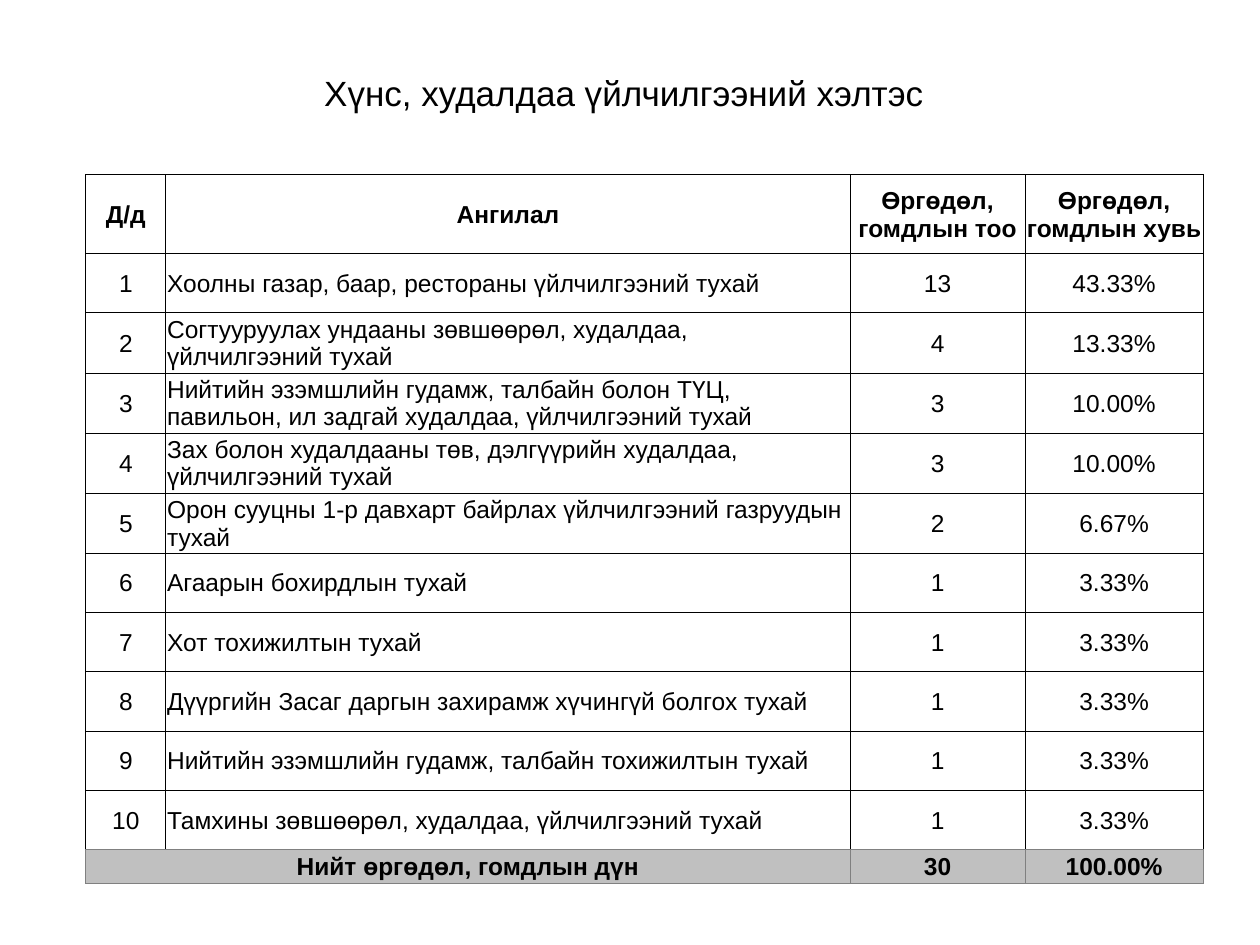
from lxml import etree
from pptx import Presentation
from pptx.dml.color import RGBColor
from pptx.enum.text import MSO_ANCHOR, PP_ALIGN
from pptx.oxml.ns import qn
from pptx.util import Pt

MIDDLE = MSO_ANCHOR.MIDDLE
LEFT, CENTER = PP_ALIGN.LEFT, PP_ALIGN.CENTER
BLACK, WHITE, GRAY, SILVER = "000000", "FFFFFF", "808080", "C0C0C0"

TITLE = "Хүнс, худалдаа үйлчилгээний хэлтэс "
HEADER = ["Д/д", "Ангилал", "Өргөдөл, гомдлын тоо", "Өргөдөл, гомдлын хувь"]
CATEGORIES = [
    ("Хоолны газар, баар, рестораны үйлчилгээний тухай", "13", "43.33%"),
    ("Согтууруулах ундааны зөвшөөрөл, худалдаа, үйлчилгээний тухай", "4", "13.33%"),
    ("Нийтийн эзэмшлийн гудамж, талбайн болон ТҮЦ, павильон, ил задгай худалдаа, үйлчилгээний тухай", "3", "10.00%"),
    ("Зах болон худалдааны төв, дэлгүүрийн худалдаа, үйлчилгээний тухай", "3", "10.00%"),
    ("Орон сууцны 1-р давхарт байрлах үйлчилгээний газруудын тухай", "2", "6.67%"),
    ("Агаарын бохирдлын тухай", "1", "3.33%"),
    ("Хот тохижилтын тухай", "1", "3.33%"),
    ("Дүүргийн Засаг даргын захирамж хүчингүй болгох тухай", "1", "3.33%"),
    ("Нийтийн эзэмшлийн гудамж, талбайн тохижилтын тухай", "1", "3.33%"),
    ("Тамхины зөвшөөрөл, худалдаа, үйлчилгээний тухай", "1", "3.33%"),
]
TOTAL = ["Нийт өргөдөл, гомдлын дүн", "", "30", "100.00%"]
COLUMN_WIDTHS = [45.8, 391, 100, 101.8]
ROW_HEIGHTS = [45.1] + [33.9] * len(CATEGORIES) + [19.4]


def rgb(value):
    return RGBColor.from_string(value)


class Deck:
    font = "Arial"

    def __init__(self, width, height):
        self.prs = Presentation()
        self.prs.slide_width, self.prs.slide_height = Pt(width), Pt(height)
        self.s = self.prs.slides.add_slide(self.prs.slide_layouts[6])

    def text(self, tf, text, size, bold=False, align=CENTER):
        tf.text = text
        tf.word_wrap = True
        p = tf.paragraphs[0]
        p.alignment = align
        for r in p.runs:
            r.font.name, r.font.size, r.font.bold = self.font, Pt(size), bold
            r.font.color.rgb = rgb(BLACK)
        return p

    def title(self, text, left, top, width, height):
        sp = self.s.shapes.add_textbox(Pt(left), Pt(top), Pt(width), Pt(height))
        sp.text_frame.vertical_anchor = MIDDLE
        self.text(sp.text_frame, text, 20).line_spacing = 0.9

    def borders(self, cell, top, bottom, side):
        tcPr = cell._tc.get_or_add_tcPr()
        edges = (("a:lnL", side), ("a:lnR", side), ("a:lnT", top), ("a:lnB", bottom))
        for i, (tag, color) in enumerate(edges):
            ln = etree.Element(qn(tag), w=str(Pt(0.5)))
            fill = etree.SubElement(ln, qn("a:solidFill"))
            etree.SubElement(fill, qn("a:srgbClr"), val=color)
            tcPr.insert(i, ln)

    def cell(self, cell, text, fill, bold, align):
        cell.margin_left = cell.margin_right = cell.margin_top = Pt(0.7)
        cell.margin_bottom = 0
        cell.vertical_anchor = MIDDLE
        cell.fill.solid()
        cell.fill.fore_color.rgb = rgb(fill)
        self.text(cell.text_frame, text, 14, bold, align)

    def table(self, rows, left, top, widths, heights):
        last = len(rows) - 1
        frame = self.s.shapes.add_table(
            len(rows), len(widths), Pt(left), Pt(top), Pt(sum(widths)), Pt(sum(heights)))
        table = frame.table
        table.first_row = table.horz_banding = False
        for column, width in zip(table.columns, widths):
            column.width = Pt(width)
        for i, (values, height) in enumerate(zip(rows, heights)):
            table.rows[i].height = Pt(height)
            total = i == last
            bold = i in (0, last)
            for j, text in enumerate(values):
                align = LEFT if j == 1 and not bold else CENTER
                cell = table.cell(i, j)
                self.cell(cell, text, SILVER if total else WHITE, bold, align)
                side = GRAY if total else BLACK
                self.borders(cell, side, GRAY if i >= last - 1 else BLACK, side)
        table.cell(last, 0).merge(table.cell(last, 1))


def main():
    deck = Deck(720, 540)
    deck.title(TITLE, 49, 27.4, 620.6, 54)
    body = [[str(n), *category] for n, category in enumerate(CATEGORIES, 1)]
    deck.table([HEADER, *body, TOTAL], 49, 99.8, COLUMN_WIDTHS, ROW_HEIGHTS)
    deck.prs.save("out.pptx")


if __name__ == "__main__":
    main()
